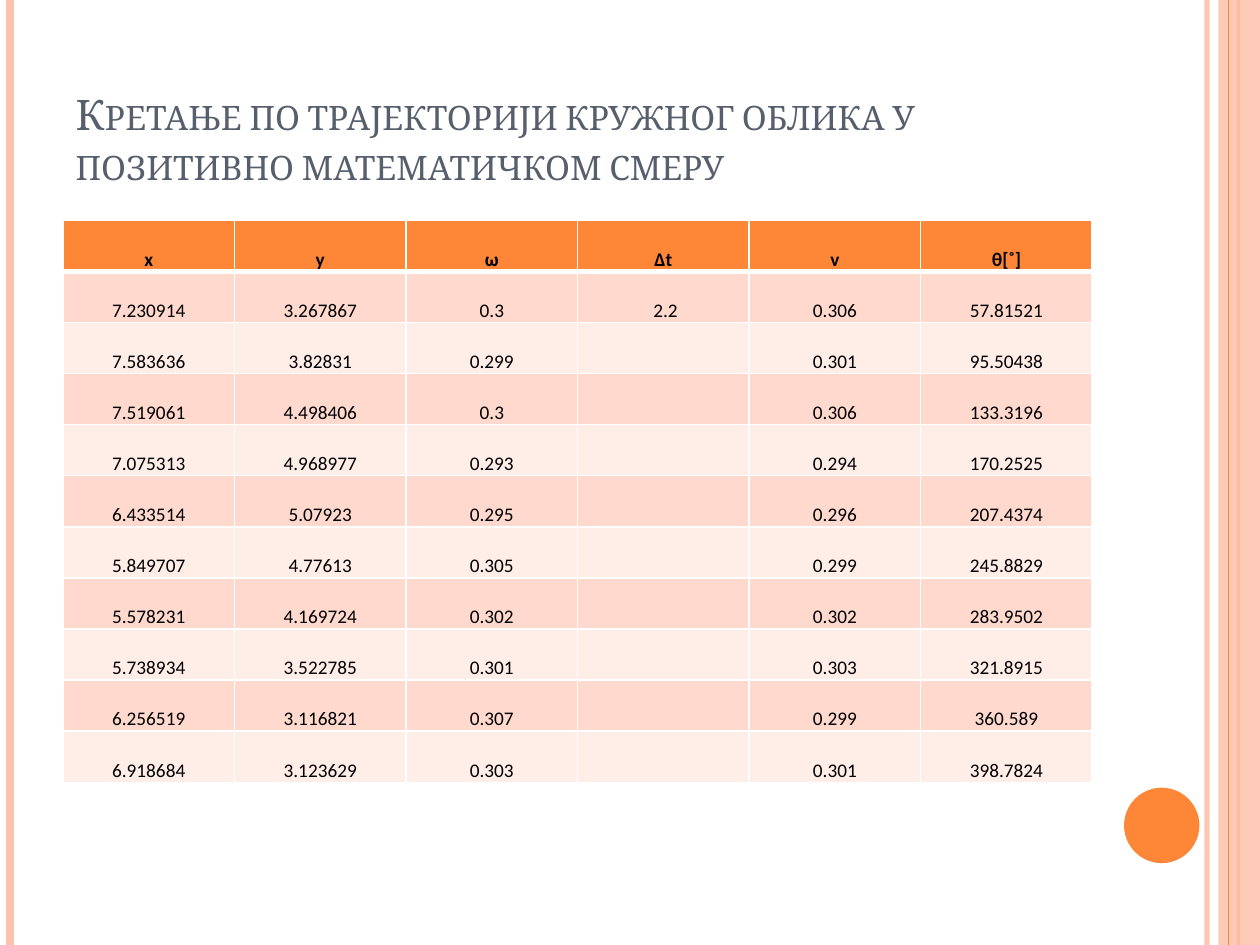
from dataclasses import dataclass

from lxml.etree import SubElement
from pptx import Presentation
from pptx.dml.color import RGBColor as RGB
from pptx.enum.shapes import MSO_CONNECTOR as CONN, MSO_SHAPE as SHAPE
from pptx.enum.text import MSO_ANCHOR as ANCHOR, MSO_AUTO_SIZE as AUTO, PP_ALIGN as ALIGN
from pptx.oxml.ns import qn
from pptx.oxml.xmlchemy import OxmlElement
from pptx.util import Cm, Pt


@dataclass(frozen=True)
class Theme:
    paper: str = "FFFFFF"
    accent: str = "FE8637"
    pale: str = "FEC3AE"
    title: str = "575F6D"
    ink: str = "000000"
    bands: tuple = ("FFD9CE", "FFEDE8")
    title_font: str = "Cambria"
    table_font: str = "Calibri"
    title_size: float = 24
    table_size: float = 11
    grid: float = 1
    header_rule: float = 3


@dataclass(frozen=True)
class Stripe:
    """Full-height vertical line."""
    x: float
    color: str
    weight: float
    alpha: int = 100


@dataclass(frozen=True)
class Block:
    """Filled shape without outline."""
    kind: SHAPE
    x: float
    y: float
    w: float
    h: float
    color: str
    alpha: int = 100


T = Theme()
WIDTH, HEIGHT = 25.4, 19.05
LEFT, CONTENT_W = 1.27, 20.75
TABLE_TOP, ROW_H = 4.44, 1.03

# Side decoration, from back to front
DECOR = [
    Stripe(24.33, T.pale, 3, 93),
    Stripe(0.2, T.pale, 4.5),
    Stripe(24.97, T.accent, 1.5),
    Block(SHAPE.RECTANGLE, 24.56, 0, 0.84, HEIGHT, T.pale, 87),
    Stripe(24.77, T.accent, 0.75),
    Block(SHAPE.OVAL, 22.66, 15.88, 1.52, 1.52, T.accent),
]

TITLE = "Кретање по трајекторији кружног облика у позитивно математичком смеру"
HEADER = ("x", "y", "ω", "∆t", "v", "θ[˚]")
ROWS = [
    ("7.230914", "3.267867", "0.3", " 2.2", "0.306", "57.81521"),
    ("7.583636", "3.82831", "0.299", "", "0.301", "95.50438"),
    ("7.519061", "4.498406", "0.3", "", "0.306", "133.3196"),
    ("7.075313", "4.968977", "0.293", "", "0.294", "170.2525"),
    ("6.433514", "5.07923", "0.295", "", "0.296", "207.4374"),
    ("5.849707", "4.77613", "0.305", "", "0.299", "245.8829"),
    ("5.578231", "4.169724", "0.302", "", "0.302", "283.9502"),
    ("5.738934", "3.522785", "0.301", "", "0.303", "321.8915"),
    ("6.256519", "3.116821", "0.307", "", "0.299", "360.589"),
    ("6.918684", "3.123629", "0.303", "", "0.301", "398.7824"),
]


def write(tf, text: str, *, font: str, size: float, color: str, bold: bool = False,
          align=ALIGN.LEFT, small_caps: bool = False) -> None:
    p = tf.paragraphs[0]
    p.alignment = align
    r = p.add_run()
    r.text = text
    f = r.font
    f.name, f.size, f.bold = font, Pt(size), bold
    f.color.rgb = RGB.from_string(color)
    if small_caps:
        r._r.get_or_add_rPr().set("cap", "small")


def paint(fill, color: str, alpha: int = 100) -> None:
    fill.solid()
    fill.fore_color.rgb = RGB.from_string(color)
    if alpha < 100:
        clr = fill._xPr.find(qn("a:solidFill"))[0]
        SubElement(clr, qn("a:alpha")).set("val", str(alpha * 1000))


def draw_stripe(slide, s: Stripe) -> None:
    line = slide.shapes.add_connector(CONN.STRAIGHT, Cm(s.x), 0, Cm(s.x), Cm(HEIGHT))
    line.line.width = Pt(s.weight)
    paint(line.line.fill, s.color, s.alpha)
    SubElement(line._element.spPr, qn("a:effectLst"))


def draw_block(slide, b: Block) -> None:
    sp = slide.shapes.add_shape(b.kind, Cm(b.x), Cm(b.y), Cm(b.w), Cm(b.h))
    sp.shadow.inherit = False
    paint(sp.fill, b.color, b.alpha)
    sp.line.fill.background()


def set_borders(cell, top: float, bottom: float) -> None:
    widths = {"a:lnL": T.grid, "a:lnR": T.grid, "a:lnT": top, "a:lnB": bottom}
    tcPr = cell._tc.get_or_add_tcPr()
    for i, (tag, weight) in enumerate(widths.items()):
        ln = OxmlElement(tag)
        ln.set("w", str(Pt(weight)))
        SubElement(SubElement(ln, qn("a:solidFill")), qn("a:srgbClr")).set("val", T.paper)
        tcPr.insert(i, ln)


def draw_table(slide, rows: list) -> None:
    n_rows, n_cols = len(rows), len(rows[0])
    table = slide.shapes.add_table(n_rows, n_cols, Cm(LEFT), Cm(TABLE_TOP),
                                   Cm(CONTENT_W), Cm(ROW_H * n_rows)).table
    for col in table.columns:
        col.width = Cm(CONTENT_W / n_cols)
    for i, values in enumerate(rows):
        table.rows[i].height = Cm(ROW_H)
        head = i == 0
        for j, value in enumerate(values):
            cell = table.cell(i, j)
            cell.margin_left = cell.margin_right = Cm(0.18)
            cell.margin_top = cell.margin_bottom = 0
            cell.vertical_anchor = ANCHOR.BOTTOM
            paint(cell.fill, T.accent if head else T.bands[(i - 1) % 2])
            set_borders(cell, top=T.header_rule if i == 1 else T.grid,
                        bottom=T.header_rule if head else T.grid)
            if value:
                write(cell.text_frame, value, font=T.table_font, size=T.table_size,
                      color=T.ink, bold=head, align=ALIGN.CENTER)


def main() -> None:
    prs = Presentation()
    prs.slide_width, prs.slide_height = Cm(WIDTH), Cm(HEIGHT)
    slide = prs.slides.add_slide(prs.slide_layouts[5])
    paint(slide.background.fill, T.paper)

    # Decoration
    for item in DECOR:
        if isinstance(item, Stripe):
            draw_stripe(slide, item)
        else:
            draw_block(slide, item)

    # Title
    title = slide.shapes.title
    title.left, title.top = Cm(LEFT), Cm(0.76)
    title.width, title.height = Cm(CONTENT_W), Cm(3.18)
    tf = title.text_frame
    tf.word_wrap, tf.auto_size, tf.vertical_anchor = True, AUTO.NONE, ANCHOR.BOTTOM
    write(tf, TITLE, font=T.title_font, size=T.title_size, color=T.title, small_caps=True)

    # Measurements
    draw_table(slide, [HEADER, *ROWS])
    prs.save("out.pptx")


if __name__ == "__main__":
    main()
